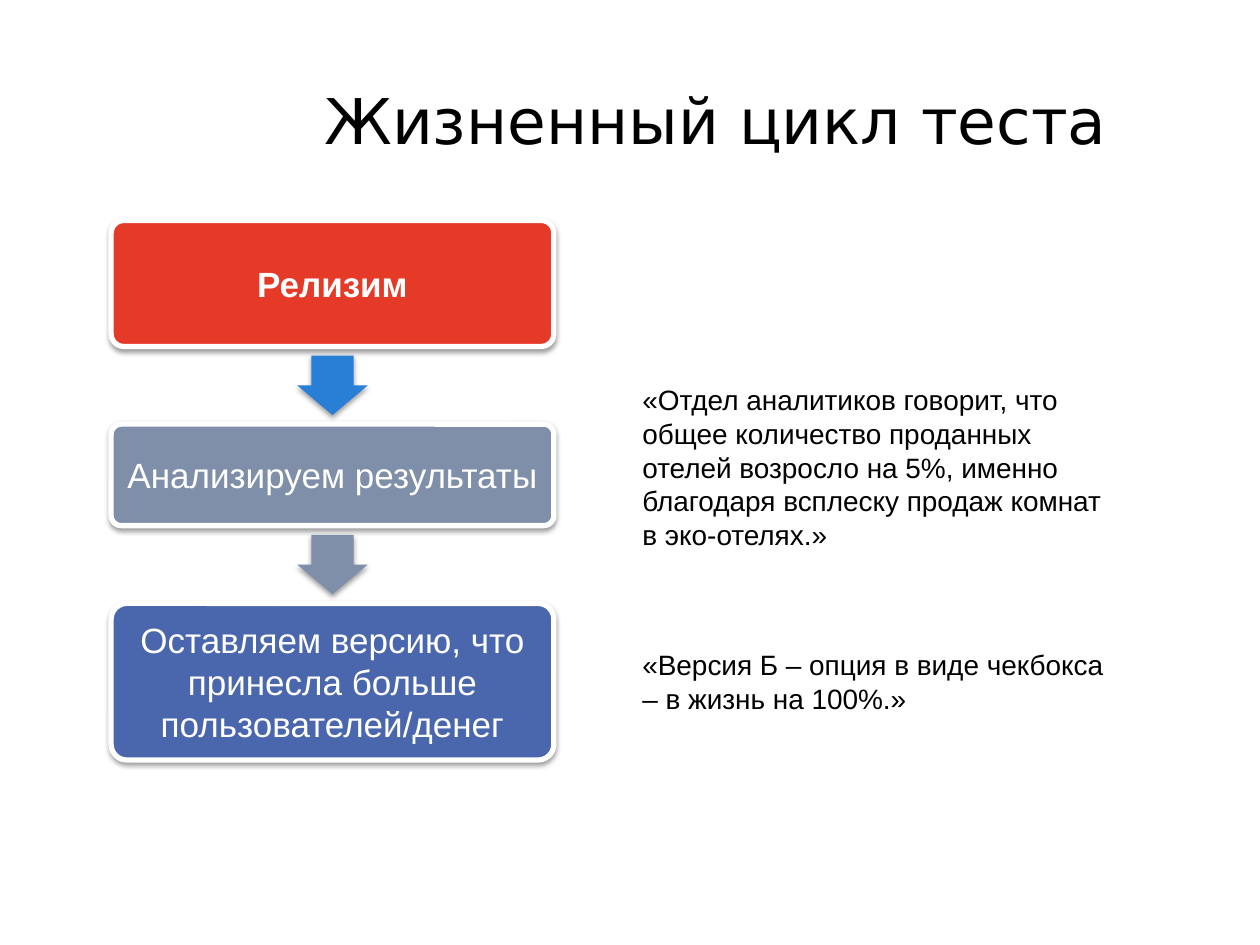
from lxml.etree import SubElement
from pptx import Presentation
from pptx.dml.color import RGBColor
from pptx.enum.shapes import MSO_SHAPE
from pptx.enum.text import MSO_ANCHOR, PP_ALIGN
from pptx.oxml.ns import qn
from pptx.util import Pt

BLACK = RGBColor(0x00, 0x00, 0x00)
WHITE = RGBColor(0xFF, 0xFF, 0xFF)
RED = RGBColor(0xE6, 0x3A, 0x28)
BLUE = RGBColor(0x29, 0x7F, 0xD5)
GREY = RGBColor(0x7F, 0x8F, 0xA9)
INDIGO = RGBColor(0x4A, 0x66, 0xAC)

STEPS = [
    ("Релизим", RED, 72, True),
    ("Анализируем результаты", GREY, 58, False),
    ("Оставляем версию, что принесла больше пользователей/денег", INDIGO, 89.5, False),
]
ARROW_COLORS = [BLUE, GREY]
ARROW_WIDTH, ARROW_HEIGHT, ARROW_GAP = 40.4, 34, 5.2
NOTES = [
    ("«Отдел аналитиков говорит, что общее количество проданных отелей возросло на 5%, "
     "именно благодаря всплеску продаж комнат в эко-отелях.»", (360, 215.3, 281.5, 104.4)),
    ("«Версия Б – опция в виде чекбокса – в жизнь на 100%.»", (360, 366.5, 288, 46)),
]


def set_attributes(target, values):
    """Set every attribute in the dict on the target."""
    for name, value in values.items():
        setattr(target, name, value)


def write_text(shape, text, size, color, font="Arial", bold=False,
               align=PP_ALIGN.LEFT, anchor=MSO_ANCHOR.TOP):
    """Put one formatted, wrapping paragraph in the shape."""
    frame = shape.text_frame
    set_attributes(frame, {"text": text, "word_wrap": True, "vertical_anchor": anchor})
    paragraph = frame.paragraphs[0]
    paragraph.alignment = align
    run_font = paragraph.runs[0].font
    set_attributes(run_font, {"name": font, "size": Pt(size), "bold": bold})
    run_font.color.rgb = color


def add_soft_shadow(shape):
    """Give the shape a faint shadow straight below it."""
    shape.shadow.inherit = False
    effects = shape._element.spPr.find(qn("a:effectLst"))
    shadow = SubElement(effects, qn("a:outerShdw"), blurRad=str(Pt(3.1)), dist=str(Pt(1.6)),
                        dir="5400000", rotWithShape="0")
    color = SubElement(shadow, qn("a:srgbClr"), val="000000")
    SubElement(color, qn("a:alpha"), val="38000")


def add_filled_shape(slide, kind, box, color, adjustments):
    """Add a solid preset shape with a soft shadow."""
    shape = slide.shapes.add_shape(kind, *map(Pt, box))
    for index, value in enumerate(adjustments):
        shape.adjustments[index] = value
    shape.fill.solid()
    shape.fill.fore_color.rgb = color
    shape.line.fill.background()
    add_soft_shadow(shape)
    return shape


def add_step(slide, box, text, color, bold):
    """Add one white-edged step of the flow."""
    shape = add_filled_shape(slide, MSO_SHAPE.ROUNDED_RECTANGLE, box, color, [0.1])
    shape.line.color.rgb = WHITE
    shape.line.width = Pt(3)
    margins = ("margin_left", "margin_right", "margin_top", "margin_bottom")
    set_attributes(shape.text_frame, dict.fromkeys(margins, Pt(5)))
    write_text(shape, text, 20, WHITE, bold=bold, align=PP_ALIGN.CENTER,
               anchor=MSO_ANCHOR.MIDDLE)


def add_flow(slide, left, top, width):
    """Stack the steps downwards with an arrow between neighbours."""
    for index, (text, color, height, bold) in enumerate(STEPS):
        if index:
            arrow_box = (left + (width - ARROW_WIDTH) / 2, top + ARROW_GAP,
                         ARROW_WIDTH, ARROW_HEIGHT)
            add_filled_shape(slide, MSO_SHAPE.DOWN_ARROW, arrow_box,
                             ARROW_COLORS[index - 1], [0.6, 0.5])
            top += ARROW_HEIGHT + 2 * ARROW_GAP
        add_step(slide, (left, top, width, height), text, color, bold)
        top += height


def add_note(slide, box, text):
    """Add a quotation beside the flow."""
    write_text(slide.shapes.add_textbox(*map(Pt, box)), text, 16, BLACK)


def place_title(slide, box, text):
    """Move and format the title placeholder."""
    title = slide.shapes.title
    set_attributes(title, dict(zip(("left", "top", "width", "height"), map(Pt, box))))
    write_text(title, text, 36, BLACK, font="DejaVu Sans", align=PP_ALIGN.CENTER,
               anchor=MSO_ANCHOR.MIDDLE)


def main():
    """Build the slide and save it."""
    presentation = Presentation()
    set_attributes(presentation, {"slide_width": Pt(720), "slide_height": Pt(540)})
    slide = presentation.slides.add_slide(presentation.slide_layouts[5])
    place_title(slide, (164, 22, 490, 92), "Жизненный цикл теста")
    add_flow(slide, 63.5, 126, 253)
    for text, box in NOTES:
        add_note(slide, box, text)
    presentation.save("out.pptx")


if __name__ == "__main__":
    main()
